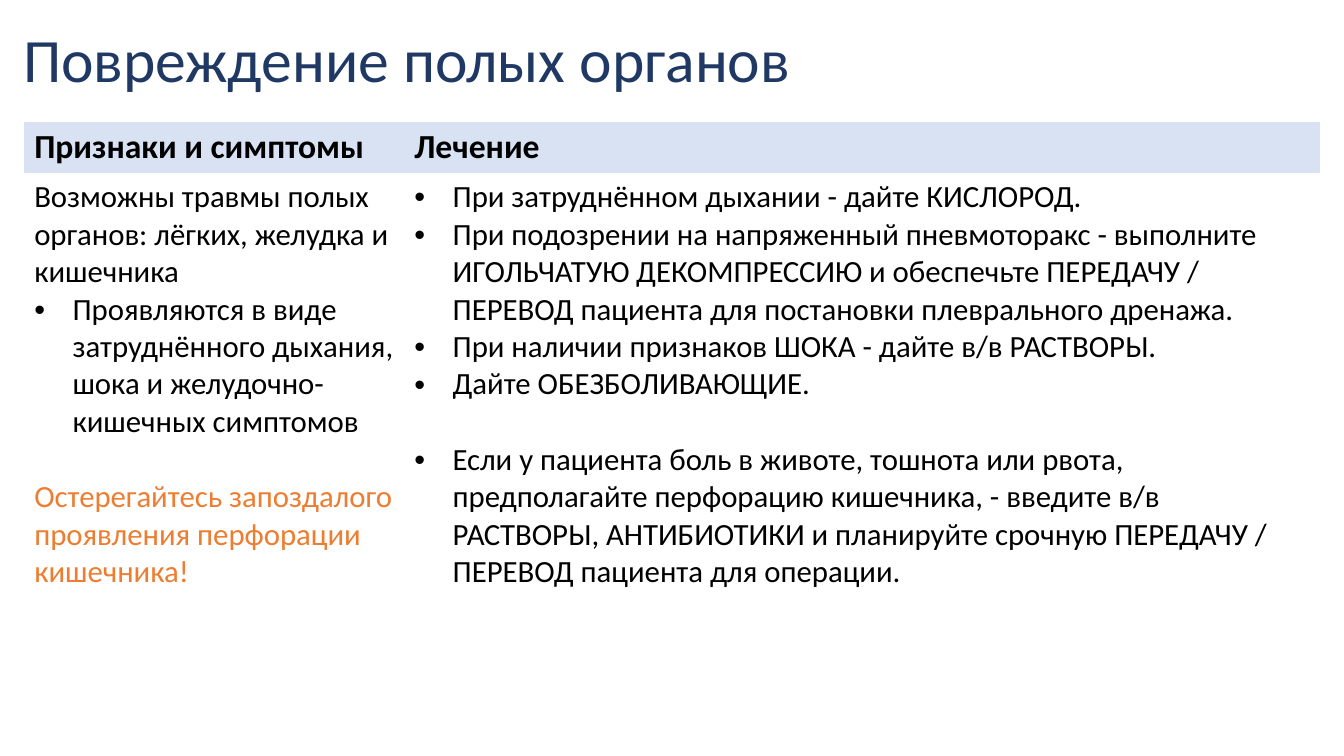
from dataclasses import dataclass

from lxml import etree
from pptx import Presentation
from pptx.dml.color import RGBColor
from pptx.enum.text import MSO_ANCHOR, MSO_AUTO_SIZE, PP_ALIGN
from pptx.oxml.ns import qn
from pptx.util import Inches, Pt

LEFT = PP_ALIGN.LEFT
MIDDLE = MSO_ANCHOR.MIDDLE
NO_AUTO_SIZE = MSO_AUTO_SIZE.NONE
FONT = "Calibri"
PLAIN_TABLE_STYLE = "{2D5ABB26-0587-4C30-8999-92F81FD0307C}"
COLORS = {"title": "1F3864", "text": "000000", "warning": "ED7D31", "header": "D8E2F3"}
COLUMN_WIDTHS = (3.77, 9.08)
ROW_HEIGHTS = (0.51, 4.7)
BULLET_INDENT = 0.38
GAP = 27


@dataclass(frozen=True)
class Item:
    text: str
    bullet: bool = True
    color: str = "text"
    space_before: float = 0


@dataclass(frozen=True)
class Column:
    header: str
    items: tuple[Item, ...]


COLUMNS = (
    Column("Признаки и симптомы", (
        Item("Возможны травмы полых органов: лёгких, желудка и кишечника", bullet=False),
        Item("Проявляются в виде затруднённого дыхания, шока и желудочно-кишечных симптомов"),
        Item("Остерегайтесь запоздалого проявления перфорации кишечника!",
             bullet=False, color="warning", space_before=GAP),
    )),
    Column("Лечение", (
        Item("При затруднённом дыхании - дайте КИСЛОРОД."),
        Item("При подозрении на напряженный пневмоторакс - выполните ИГОЛЬЧАТУЮ ДЕКОМПРЕССИЮ "
             "и обеспечьте ПЕРЕДАЧУ / ПЕРЕВОД пациента для постановки плеврального дренажа."),
        Item("При наличии признаков ШОКА - дайте в/в РАСТВОРЫ."),
        Item("Дайте ОБЕЗБОЛИВАЮЩИЕ."),
        Item("Если у пациента боль в животе, тошнота или рвота, предполагайте перфорацию "
             "кишечника, - введите в/в РАСТВОРЫ, АНТИБИОТИКИ и планируйте срочную "
             "ПЕРЕДАЧУ / ПЕРЕВОД пациента для операции.", space_before=GAP),
    )),
)


def add_bullet(paragraph) -> None:
    """Give a paragraph a hanging round bullet."""
    properties = paragraph._p.get_or_add_pPr()
    properties.set("marL", str(Inches(BULLET_INDENT)))
    properties.set("indent", str(-Inches(BULLET_INDENT)))
    bullet_color = etree.SubElement(properties, qn("a:buClr"))
    etree.SubElement(bullet_color, qn("a:srgbClr"), val=COLORS["text"])
    etree.SubElement(properties, qn("a:buFont"), typeface="Arial")
    etree.SubElement(properties, qn("a:buChar"), char="•")


def write_paragraph(paragraph, text: str, *, size: float, color: str = "text",
                    bold: bool = False, bullet: bool = False,
                    space_before: float = 0, line_spacing: float = 1.0) -> None:
    """Write one formatted paragraph."""
    if bullet:
        add_bullet(paragraph)
    paragraph.alignment = LEFT
    paragraph.line_spacing = line_spacing
    if space_before:
        paragraph.space_before = Pt(space_before)
    run = paragraph.add_run()
    run.text = text
    run.font.name = FONT
    run.font.size = Pt(size)
    run.font.bold = bold
    run.font.color.rgb = RGBColor.from_string(COLORS[color])


def add_title(slide, text: str) -> None:
    """Place and format the slide title."""
    title = slide.shapes.title
    title.left, title.top = Inches(0.13), Inches(0.15)
    title.width, title.height = Inches(10.59), Inches(0.94)
    frame = title.text_frame
    frame.word_wrap = True
    frame.auto_size = NO_AUTO_SIZE
    frame.vertical_anchor = MIDDLE
    write_paragraph(frame.paragraphs[0], text, size=44, color="title", line_spacing=0.9)


def add_treatment_table(slide) -> None:
    """Draw the table of symptoms and treatment."""
    table = slide.shapes.add_table(
        len(ROW_HEIGHTS), len(COLUMNS), Inches(0.24), Inches(1.21),
        Inches(sum(COLUMN_WIDTHS)), Inches(sum(ROW_HEIGHTS))).table
    table.first_row = table.horz_banding = False
    table._tbl.tblPr.find(qn("a:tableStyleId")).text = PLAIN_TABLE_STYLE
    for row, height in zip(table.rows, ROW_HEIGHTS):
        row.height = Inches(height)
    for index, (column, width) in enumerate(zip(COLUMNS, COLUMN_WIDTHS)):
        table.columns[index].width = Inches(width)
        header, body = table.cell(0, index), table.cell(1, index)
        header.fill.solid()
        header.fill.fore_color.rgb = RGBColor.from_string(COLORS["header"])
        write_paragraph(header.text_frame.paragraphs[0], column.header, size=24, bold=True)
        body.fill.background()
        frame = body.text_frame
        for position, item in enumerate(column.items):
            paragraph = frame.add_paragraph() if position else frame.paragraphs[0]
            write_paragraph(paragraph, item.text, size=22, color=item.color,
                            bullet=item.bullet, space_before=item.space_before)


def main() -> None:
    """Build and save the slide."""
    presentation = Presentation()
    presentation.slide_width, presentation.slide_height = Inches(13.33), Inches(7.5)
    slide = presentation.slides.add_slide(presentation.slide_layouts.get_by_name("Title Only"))
    add_title(slide, "Повреждение полых органов")
    add_treatment_table(slide)
    presentation.save("out.pptx")


if __name__ == "__main__":
    main()
